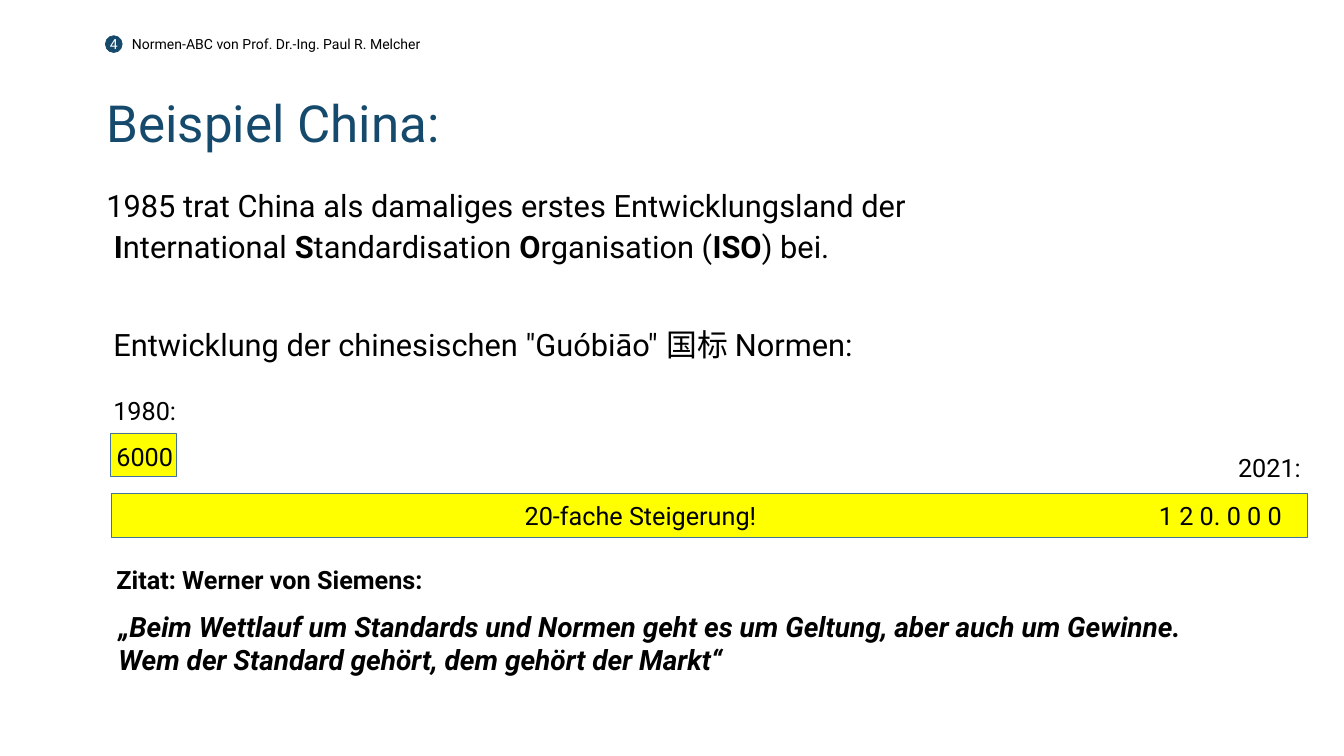
from pptx import Presentation
from pptx.dml.color import RGBColor
from pptx.enum import shapes, text
from pptx.util import Pt

FONT = "Roboto"
NAVY = RGBColor(0x15, 0x4A, 0x6C)
BLACK = RGBColor(0, 0, 0)
WHITE = RGBColor(0xFF, 0xFF, 0xFF)
YELLOW = RGBColor(0xFF, 0xFF, 0)
STEEL = RGBColor(0x43, 0x73, 0x9E)
LABEL_HEIGHT = 51


def style(paragraph, size, color=BLACK, bold=None, italic=None):
    for run in paragraph.runs:
        font = run.font
        font.name, font.size = FONT, Pt(size)
        font.color.rgb = color
        if bold is not None:
            font.bold = bold
        if italic is not None:
            font.italic = italic


def add_label(slide, box, wording, size, wrap=True, **look):
    label = slide.shapes.add_textbox(*map(Pt, box))
    frame = label.text_frame
    frame.word_wrap = wrap
    frame.text = wording
    style(frame.paragraphs[0], size, **look)
    return frame


def center_without_margins(frame):
    frame.margin_left = frame.margin_right = 0
    frame.margin_top = frame.margin_bottom = 0
    frame.vertical_anchor = text.MSO_ANCHOR.MIDDLE


def add_block(slide, kind, box, fill, line):
    block = slide.shapes.add_shape(kind, *map(Pt, box))
    block.shadow.inherit = False
    block.fill.solid()
    block.fill.fore_color.rgb = fill
    block.line.color.rgb = line
    block.line.width = Pt(1)
    return block


def add_header(slide, box):
    """Page number in a disc, followed by the running header."""
    left, top, width, height = box
    disc = add_block(slide, shapes.MSO_SHAPE.OVAL, (left, top, height, height), NAVY, NAVY)
    number = disc.text_frame
    number.text = "4"
    number.word_wrap = False
    center_without_margins(number)
    number.paragraphs[0].alignment = text.PP_ALIGN.CENTER
    style(number.paragraphs[0], 20, WHITE)
    running = add_label(slide, (left + 38, top + 2, width - 38, height - 4),
                        "Normen-ABC von Prof. Dr.-Ing. Paul R. Melcher", 20)
    center_without_margins(running)


def place_title(slide, box):
    title = slide.shapes.title
    title.left, title.top, title.width, title.height = map(Pt, box)
    frame = title.text_frame
    frame.text = "Beispiel China:"
    frame.vertical_anchor = text.MSO_ANCHOR.TOP
    heading = frame.paragraphs[0]
    heading.alignment = text.PP_ALIGN.LEFT
    heading.line_spacing = 0.9
    style(heading, 73, NAVY)


def add_accession(slide, box):
    """Opening statement with the letters of ISO in bold."""
    frame = add_label(slide, box,
                      "1985 trat China als damaliges erstes Entwicklungsland der\v ", 44)
    statement = frame.paragraphs[0]
    statement.line_spacing = 1.1
    pieces = ["I", "nternational ", "S", "tandardisation ", "O",
              "rganisation (", "ISO", ") bei."]
    for piece in pieces:
        statement.add_run().text = piece
    style(statement, 44)
    for initial in statement.runs[-len(pieces)::2]:
        initial.font.bold = True


def add_growth(slide, box):
    """Number of standards in 1980 and 2021 as two bars to compare."""
    left, top, width, height = box
    bar_height = 62.6
    early_top, late_top = top + 162, top + height - bar_height
    heading = add_label(slide, (left, top, width, 66),
                        'Entwicklung der chinesischen "Guóbiāo" 国标 Normen:', 44)
    heading.paragraphs[0].line_spacing = 1.1
    heading.paragraphs[0].space_before = Pt(26)

    bars = [(left + 3, early_top, 94.3), (left + 4.3, late_top, 1707.8)]
    for bar_left, bar_top, bar_width in bars:
        add_block(slide, shapes.MSO_SHAPE.RECTANGLE,
                  (bar_left, bar_top, bar_width, bar_height), YELLOW, STEEL)

    labels = [
        ("1980:", 0, early_top - 57.6, 107.3),
        ("6000", 4.3, early_top + 8.6, 107.3),
        ("2021:", 1606.3, late_top - 62.6, 107.3),
        ("20-fache Steigerung!", 587.5, late_top + 6.5, 369.4),
        ("1 2 0. 0 0 0", 1493.3, late_top + 6.5, 238.3),
    ]
    for wording, offset, label_top, label_width in labels:
        add_label(slide, (left + offset, label_top, label_width, LABEL_HEIGHT), wording, 36)


def add_quote(slide, box):
    left, top, width, height = box
    add_label(slide, (left, top, 484.6, LABEL_HEIGHT), "Zitat: Werner von Siemens:",
              36, wrap=False, bold=True)
    add_label(slide, (left + 2.9, top + 64, width - 2.9, height - 64),
              "„Beim Wettlauf um Standards und Normen geht es um Geltung, "
              "aber auch um Gewinne.\vWem der Standard gehört, dem gehört der Markt“",
              40, bold=True, italic=True)


def main():
    deck = Presentation()
    deck.slide_width, deck.slide_height = Pt(1919.5), Pt(1080)
    slide = deck.slides.add_slide(deck.slide_layouts[5])
    add_header(slide, (150.5, 51, 1315, 24))
    place_title(slide, (144.7, 137.5, 1724.4, 130.3))
    add_accession(slide, (144.7, 257.8, 1741.7, 138.2))
    add_growth(slide, (154.8, 456.5, 1735.9, 311))
    add_quote(slide, (159.1, 802.8, 1714.3, 168.4))
    deck.save("out.pptx")


if __name__ == "__main__":
    main()
